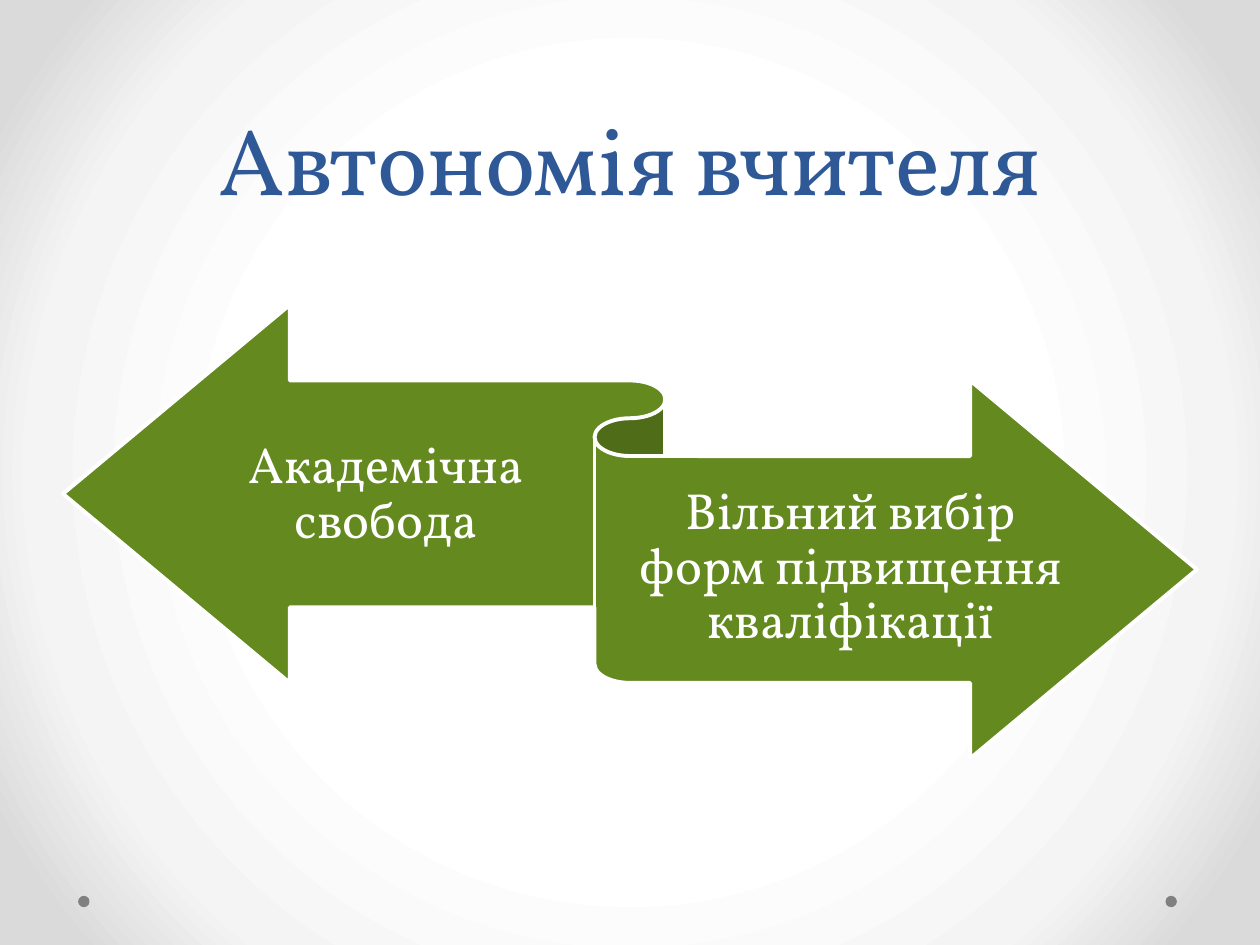
"""Build a slide on teacher autonomy with a two-way ribbon."""
from pptx import Presentation
from pptx.dml.color import RGBColor
from pptx.enum.shapes import MSO_SHAPE
from pptx.enum.text import MSO_ANCHOR, MSO_AUTO_SIZE, PP_ALIGN
from pptx.oxml import parse_xml
from pptx.oxml.ns import nsdecls
from pptx.util import Inches, Pt


def color(value):
    return RGBColor.from_string(value)


def write(frame, text, size, value, spacing):
    frame.word_wrap = True
    frame.auto_size = MSO_AUTO_SIZE.NONE
    para = frame.paragraphs[0]
    para.alignment = PP_ALIGN.CENTER
    para.line_spacing = spacing
    span = para.add_run()
    span.text = text
    span.font.name = "Vollkorn"
    span.font.size = Pt(size)
    span.font.color.rgb = color(value)


deck = Presentation()
deck.slide_width, deck.slide_height = Inches(10), Inches(7.5)
page = deck.slides.add_slide(deck.slide_layouts[5])

page.background.fill.gradient()
gradient = page.element.xpath("./p:cSld/p:bg/p:bgPr/a:gradFill")[0]
stops = "".join(
    f'<a:gs pos="{percent * 1000}"><a:srgbClr val="{value}"/></a:gs>'
    for percent, value in [(50, "FFFFFF"), (76, "F4F4F4"), (92, "DADADA")]
)
gradient.getparent().replace(gradient, parse_xml(
    f'<a:gradFill {nsdecls("a")} rotWithShape="1"><a:gsLst>{stops}</a:gsLst>'
    '<a:path path="circle"><a:fillToRect l="50000" t="50000" r="50000" b="50000"/>'
    '</a:path></a:gradFill>'
))

for left in (0.62, 9.25):
    dot = page.shapes.add_shape(
        MSO_SHAPE.OVAL, Inches(left), Inches(7.11), Inches(0.09), Inches(0.09))
    dot.shadow.inherit = False
    dot.fill.solid()
    dot.fill.fore_color.rgb = color("808080")
    dot.line.fill.background()

title = page.shapes.title
title.left, title.top = Inches(0.5), Inches(0)
title.width, title.height = Inches(9), Inches(1.75)
title.text_frame.vertical_anchor = MSO_ANCHOR.BOTTOM
write(title.text_frame, "Автономія вчителя", 54, "2F5897", Pt(58))

ribbon = page.shapes.add_shape(
    MSO_SHAPE.LEFT_RIGHT_RIBBON, Inches(0.5), Inches(2.42), Inches(9), Inches(3.6))
ribbon.shadow.inherit = False
ribbon.fill.solid()
ribbon.fill.fore_color.rgb = color("63891F")
ribbon.line.color.rgb = color("FFFFFF")
ribbon.line.width = Pt(2.25)

for left, top, width, text in [
    (1.58, 3.05, 2.97, "Академічна свобода"),
    (5, 3.63, 3.51, "Вільний вибір форм підвищення кваліфікації"),
]:
    box = page.shapes.add_textbox(Inches(left), Inches(top), Inches(width), Inches(1.76))
    frame = box.text_frame
    frame.vertical_anchor = MSO_ANCHOR.MIDDLE
    frame.margin_left = frame.margin_right = Inches(0)
    frame.margin_top, frame.margin_bottom = Inches(0.11), Inches(0.12)
    write(frame, text, 29, "FFFFFF", 0.9)

deck.save("out.pptx")
